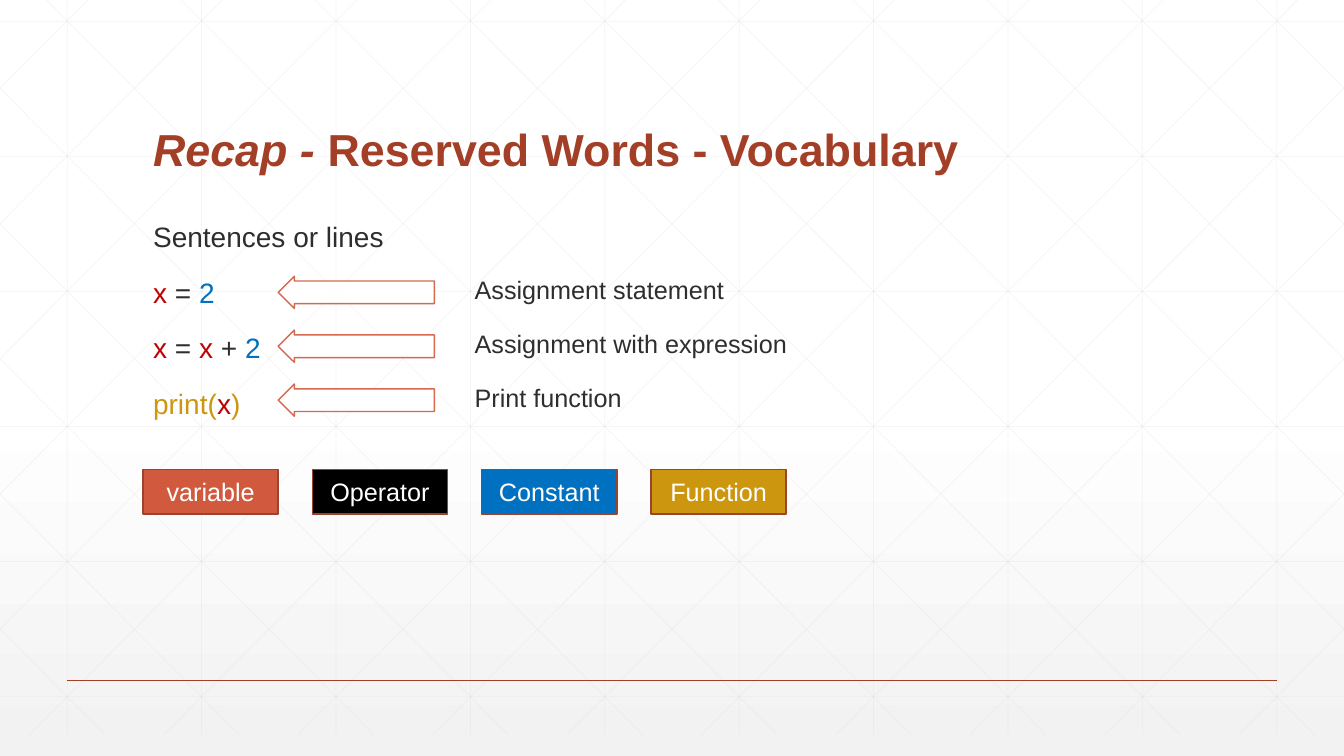
"""Build the recap slide on reserved words and the vocabulary of a program."""
from copy import deepcopy
from dataclasses import dataclass

from lxml import etree
from pptx import Presentation
from pptx import util as u
from pptx.dml.color import RGBColor
from pptx.enum import shapes, text
from pptx.oxml import ns

WIDTH, HEIGHT = u.Inches(13.333), u.Inches(7.5)
FONT = "Arial"

WHITE = RGBColor(0xFF, 0xFF, 0xFF)
BLACK = RGBColor(0x00, 0x00, 0x00)
MIST = RGBColor(0xF2, 0xF2, 0xF2)
LATTICE = RGBColor(0xD9, 0xD9, 0xD9)
RUST = RGBColor(0xA4, 0x3F, 0x27)
BORDER = RGBColor(0x9B, 0x43, 0x2E)
CORAL = RGBColor(0xD1, 0x5A, 0x3E)
INK = RGBColor(0x2D, 0x2E, 0x2D)
RED = RGBColor(0xC0, 0x00, 0x00)
BLUE = RGBColor(0x00, 0x70, 0xC0)
GOLD = RGBColor(0xCC, 0x96, 0x0F)

MARGIN = 10.65
LATTICE_TOP, LATTICE_BOTTOM = -2.8, 97.2
DIAGONAL_RUN = 55.91
STATEMENT_STEP = 7.13
TAG_STEP = 12.6


@dataclass(frozen=True)
class Area:
    """A rectangle in percent of the slide's width and height."""
    left: float
    top: float
    width: float
    height: float


@dataclass(frozen=True)
class Span:
    """A run of text with its own look."""
    words: str
    color: RGBColor = INK
    size: int = 20
    bold: bool = False
    italic: bool = False


@dataclass(frozen=True)
class Note:
    """The label of a statement and the width of its box."""
    words: str
    width: float


@dataclass(frozen=True)
class Tag:
    """A coloured box that names one kind of word."""
    words: str
    fill: RGBColor


TITLE = [Span("Recap - ", RUST, 32, True, True),
         Span("Reserved Words - Vocabulary", RUST, 32, True)]
PROGRAM = [
    [Span("Sentences or lines")],
    [Span("x", RED), Span(" = "), Span("2", BLUE)],
    [Span("x", RED), Span(" = "), Span("x", RED), Span(" + "), Span("2", BLUE)],
    [Span("print(", GOLD), Span("x", RED), Span(")", GOLD)],
]
NOTES = [Note("Assignment statement", 23.48),
         Note("Assignment with expression", 29.55),
         Note("Print function", 23.48)]
TAGS = [Tag("variable", CORAL), Tag("Operator", BLACK),
        Tag("Constant", BLUE), Tag("Function", GOLD)]


def across(share: float) -> int:
    """Turn a percentage of the slide's width into a length."""
    return round(WIDTH * share / 100)


def down(share: float) -> int:
    """Turn a percentage of the slide's height into a length."""
    return round(HEIGHT * share / 100)


def place(area: Area) -> tuple[int, int, int, int]:
    """Give the left, top, width and height of an area."""
    return across(area.left), down(area.top), across(area.width), down(area.height)


def set_opacity(fill_parent, percent: int) -> None:
    """Make the solid fill directly under an element partly transparent."""
    color = fill_parent.find(ns.qn("a:solidFill"))[0]
    etree.SubElement(color, ns.qn("a:alpha")).set("val", str(percent * 1000))


def paint_background(page) -> None:
    """Fade the page from white to a light grey at the bottom."""
    fill = page.background.fill
    fill.gradient()
    fill.gradient_angle = 270
    stop_list = next(page._element.iter(ns.qn("a:gsLst")))
    stop_list.insert(1, deepcopy(stop_list[0]))
    looks = [(0, WHITE), (0.53, WHITE), (1, MIST)]
    for stop, (position, color) in zip(fill.gradient_stops, looks):
        stop.position = position
        stop.color.rgb = color


def add_line(page, x1: float, y1: float, x2: float, y2: float,
             color: RGBColor = LATTICE, weight: float = 0.5, opacity: int = 25) -> None:
    """Draw a straight line between two points given in percent."""
    line = page.shapes.add_connector(shapes.MSO_CONNECTOR.STRAIGHT,
                                     across(x1), down(y1), across(x2), down(y2))
    line.line.color.rgb = color
    line.line.width = u.Pt(weight)
    properties = line._element.spPr
    if opacity < 100:
        set_opacity(properties.find(ns.qn("a:ln")), opacity)
    etree.SubElement(properties, ns.qn("a:effectLst"))


def add_lattice(page) -> None:
    """Draw the pale grid and its mirrored diagonals."""
    for column in range(10):
        x = 5 + 10 * column
        add_line(page, x, LATTICE_TOP, x, LATTICE_BOTTOM)
    for row in range(6):
        y = 2.8 + 17.87 * row
        add_line(page, 0, y, 100, y)
    for column in range(-5, 10):
        start = 1.9 + 10 * column
        x1, x2 = max(start, 0), min(start + DIAGONAL_RUN, 100)
        y1, y2 = (LATTICE_TOP + 100 * (x - start) / DIAGONAL_RUN for x in (x1, x2))
        add_line(page, x1, y1, x2, y2)
        add_line(page, 100 - x1, y1, 100 - x2, y2)


def add_spans(para, spans: list[Span]) -> None:
    """Write the runs of one paragraph."""
    for span in spans:
        run = para.add_run()
        run.text = span.words
        font = run.font
        font.name, font.size = FONT, u.Pt(span.size)
        font.bold, font.italic = span.bold, span.italic
        font.color.rgb = span.color


def add_text(page, area: Area, lines: list[list[Span]], before: float = 0,
             indent: float = 0, anchor=text.MSO_ANCHOR.TOP) -> None:
    """Add a wrapped text box with one paragraph for each line."""
    frame = page.shapes.add_textbox(*place(area)).text_frame
    frame.word_wrap = True
    frame.vertical_anchor = anchor
    for index, spans in enumerate(lines):
        para = frame.add_paragraph() if index else frame.paragraphs[0]
        para.line_spacing = 0.9
        para.space_before = u.Pt(before)
        if indent:
            para._p.get_or_add_pPr().set("marL", str(across(indent)))
        add_spans(para, spans)


def add_box(page, kind, area: Area, fill: RGBColor, border: RGBColor):
    """Add a flat preset shape with a thin border."""
    box = page.shapes.add_shape(kind, *place(area))
    box.shadow.inherit = False
    box.fill.solid()
    box.fill.fore_color.rgb = fill
    box.line.color.rgb = border
    box.line.width = u.Pt(1)
    return box


def add_arrow(page, area: Area) -> None:
    """Add a block arrow that points back at a statement."""
    arrow = add_box(page, shapes.MSO_SHAPE.RIGHT_ARROW, area, WHITE, CORAL)
    arrow.rotation = 180
    arrow.adjustments[0], arrow.adjustments[1] = 0.7, 0.5
    properties = arrow._element.spPr
    for parent in (properties, properties.find(ns.qn("a:ln"))):
        set_opacity(parent, 90)


def add_tag(page, area: Area, tag: Tag) -> None:
    """Add a filled box with a centred word."""
    frame = add_box(page, shapes.MSO_SHAPE.RECTANGLE, area, tag.fill, BORDER).text_frame
    frame.vertical_anchor = text.MSO_ANCHOR.MIDDLE
    para = frame.paragraphs[0]
    para.alignment = text.PP_ALIGN.CENTER
    add_spans(para, [Span(tag.words, WHITE, 18)])


def main() -> None:
    """Build and save the deck."""
    deck = Presentation()
    deck.slide_width, deck.slide_height = WIDTH, HEIGHT
    page = deck.slides.add_slide(deck.slide_layouts[6])
    paint_background(page)
    add_lattice(page)
    add_line(page, 5, 90, 95, 90, RUST, 1, 100)
    add_text(page, Area(MARGIN, 7.33, 78.75, 16.67), [TITLE], anchor=text.MSO_ANCHOR.BOTTOM)
    add_text(page, Area(MARGIN, 28.93, 78.75, 55.6), PROGRAM, before=18)
    for row, note in enumerate(NOTES):
        shift = STATEMENT_STEP * row
        add_arrow(page, Area(20.7, 36.53 + shift, 11.62, 4.27))
        add_text(page, Area(32.33, 36.13 + shift, note.width, 5.07),
                 [[Span(note.words, size=18)]], before=12, indent=2.25)
    for column, tag in enumerate(TAGS):
        add_tag(page, Area(MARGIN + TAG_STEP * column, 62.13, 10.05, 5.87), tag)
    deck.save("out.pptx")


if __name__ == "__main__":
    main()
